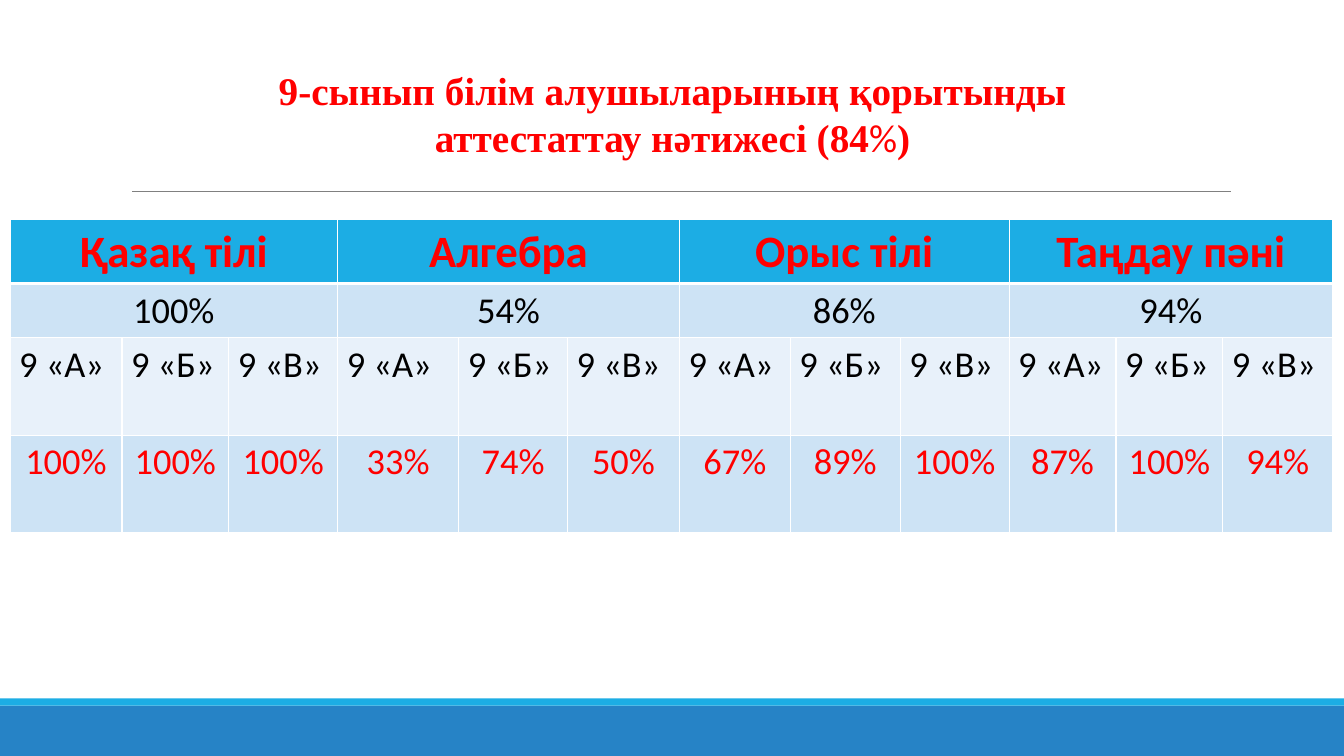
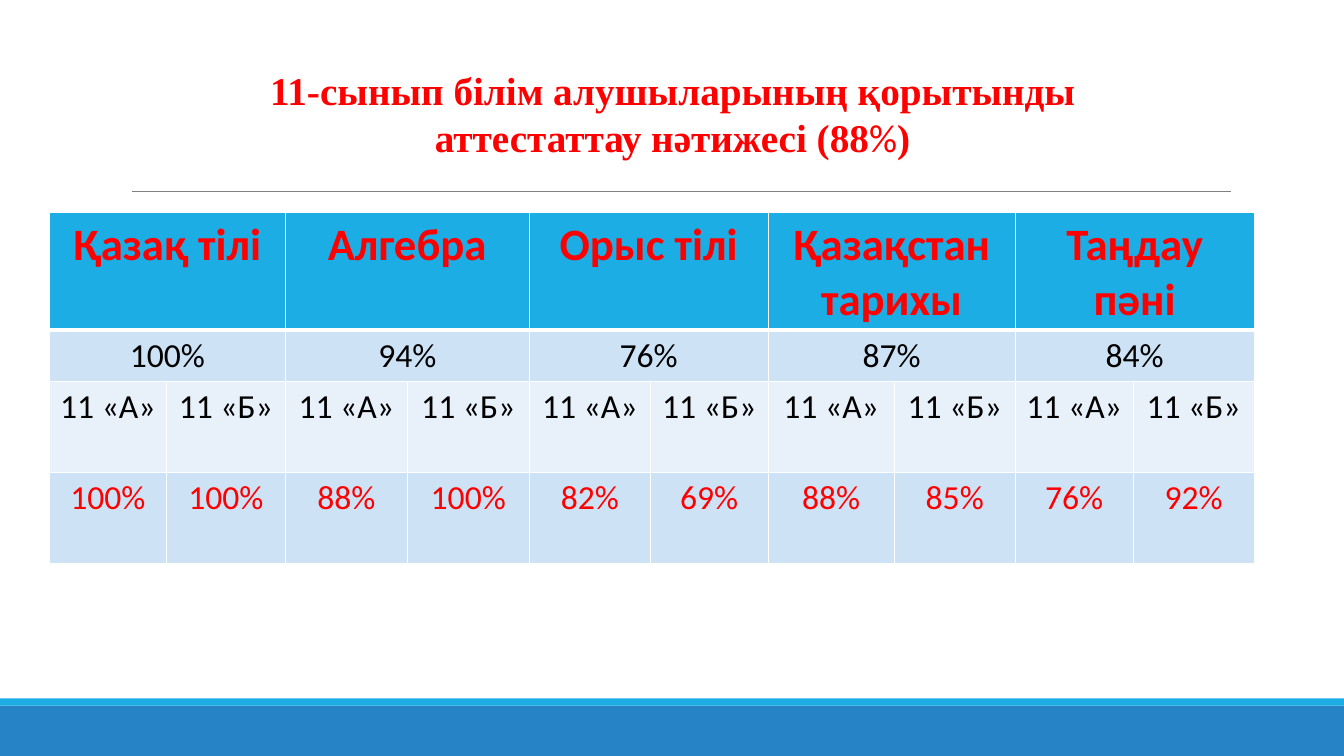
from dataclasses import dataclass

from lxml.etree import SubElement
from pptx import Presentation
from pptx.dml.color import RGBColor
from pptx.enum.shapes import MSO_CONNECTOR, MSO_SHAPE
from pptx.enum.text import MSO_ANCHOR, MSO_AUTO_SIZE, PP_ALIGN
from pptx.oxml.ns import qn
from pptx.util import Inches, Pt

RED, BLACK, WHITE, GREY = "FF0000", "000000", "FFFFFF", "808080"
BLUE, SKY, PALE, PALER = "2683C6", "1CADE4", "CDE3F5", "E8F1FA"
BODY_FONT, TITLE_FONT = "Calibri", "Times New Roman"
HEADER_SIZE = 32
CELL_MARGIN = 0.09


@dataclass(frozen=True)
class Subject:
    name: str
    total: int
    results: tuple[int, ...]


@dataclass(frozen=True)
class GradeSlide:
    grade: int
    average: int
    classes: str
    subjects: tuple[Subject, ...]
    left: float
    top: float
    widths: tuple[float, ...]
    heights: tuple[float, ...]
    size: int
    class_align: PP_ALIGN


@dataclass(frozen=True)
class RowStyle:
    fill: str
    color: str
    size: int
    bold: bool = False
    align: PP_ALIGN = PP_ALIGN.CENTER
    bottom: float = 1


GRADES = (
    GradeSlide(
        9, 84, "АБВ",
        (
            Subject("Қазақ тілі", 100, (100, 100, 100)),
            Subject("Алгебра", 54, (33, 74, 50)),
            Subject("Орыс тілі", 86, (67, 89, 100)),
            Subject("Таңдау пәні", 94, (87, 100, 94)),
        ),
        0.1, 2.18,
        (1.11, 1.06, 1.08, 1.2, 1.08, 1.11, 1.1, 1.09, 1.08, 1.06, 1.06, 1.09),
        (0.63, 0.53, 0.97, 0.97), 26, PP_ALIGN.LEFT,
    ),
    GradeSlide(
        11, 88, "АБ",
        (
            Subject("Қазақ тілі", 100, (100, 100)),
            Subject("Алгебра", 94, (88, 100)),
            Subject("Орыс тілі", 76, (82, 69)),
            Subject("Қазақстан тарихы", 87, (88, 85)),
            Subject("Таңдау пәні", 84, (76, 92)),
        ),
        0.49, 2.11,
        (1.16, 1.18, 1.21, 1.21, 1.2, 1.17, 1.25, 1.2, 1.17, 1.2),
        (1.16, 0.51, 0.9, 0.9), 24, PP_ALIGN.CENTER,
    ),
)


def rgb(color: str) -> RGBColor:
    """Turn a hex string into a colour."""
    return RGBColor.from_string(color)


def set_font(font, name: str, size: int, color: str, bold: bool) -> None:
    """Format the font of a paragraph or run."""
    font.name, font.size, font.bold = name, Pt(size), bold
    font.color.rgb = rgb(color)


def set_borders(cell, bottom: float) -> None:
    """Give a cell white borders, with its own bottom width."""
    tc_pr = cell._tc.get_or_add_tcPr()
    for i, (side, width) in enumerate(zip("LRTB", (1, 1, 1, bottom))):
        ln = SubElement(tc_pr, qn(f"a:ln{side}"), w=str(Pt(width)))
        fill = SubElement(ln, qn("a:solidFill"))
        SubElement(fill, qn("a:srgbClr"), val=WHITE)
        tc_pr.insert(i, ln)


def add_band(s, top: float, height: float, color: str):
    """Draw a full-width band."""
    band = s.shapes.add_shape(
        MSO_SHAPE.RECTANGLE, 0, Inches(top), Inches(13.33), Inches(height))
    band.shadow.inherit = False
    band.fill.solid()
    band.fill.fore_color.rgb = rgb(color)
    band.line.fill.background()
    return band


def add_rule(s):
    """Draw the thin line under the title."""
    rule = s.shapes.add_connector(
        MSO_CONNECTOR.STRAIGHT, Inches(1.31), Inches(1.9), Inches(12.21), Inches(1.9))
    rule.line.color.rgb = rgb(GREY)
    rule.line.width = Pt(0.5)
    SubElement(rule._element.spPr, qn("a:effectLst"))
    return rule


def style_layout(layout, s) -> None:
    """Place the title and move the shared decoration from a slide to its layout."""
    title = layout.placeholders[0]
    title.left, title.top = Inches(1.96), Inches(0.6)
    title.width, title.height = Inches(9.42), Inches(1.04)
    tree = title._element.getparent()
    shared = (add_band(s, 7, 0.5, BLUE), add_band(s, 6.93, 0.07, SKY), add_rule(s))
    for i, shape in enumerate(shared, start=2):
        tree.insert(i, shape._element)


def add_title(s, g: GradeSlide) -> None:
    """Fill the title, with its percent sign in the body font."""
    tf = s.shapes.title.text_frame
    tf.word_wrap = True
    tf.auto_size = MSO_AUTO_SIZE.SHAPE_TO_FIT_TEXT
    tf.vertical_anchor = MSO_ANCHOR.MIDDLE
    p = tf.paragraphs[0]
    p.alignment = PP_ALIGN.CENTER
    lead = f"{g.grade}-сынып білім алушыларының қорытынды аттестаттау нәтижесі ({g.average}"
    for text, font, bold in (
        (lead, TITLE_FONT, True), ("%", BODY_FONT, False), (")", TITLE_FONT, True)
    ):
        r = p.add_run()
        r.text = text
        set_font(r.font, font, 28, RED, bold)


def fill_row(table, row: int, texts: list[str], style: RowStyle) -> None:
    """Write a row, merging cells evenly when there are fewer texts than columns."""
    count = len(table.columns)
    span = count // len(texts)
    for col in range(count):
        cell = table.cell(row, col)
        cell.fill.solid()
        cell.fill.fore_color.rgb = rgb(style.fill)
        cell.margin_left = cell.margin_right = Inches(CELL_MARGIN)
        set_borders(cell, style.bottom)
    for i, text in enumerate(texts):
        cell = table.cell(row, i * span)
        if span > 1:
            cell.merge(table.cell(row, (i + 1) * span - 1))
        cell.text = text
        p = cell.text_frame.paragraphs[0]
        p.alignment = style.align
        set_font(p.font, BODY_FONT, style.size, style.color, style.bold)


def add_results(s, g: GradeSlide) -> None:
    """Draw the table of results by subject and class."""
    frame = s.shapes.add_table(
        len(g.heights), len(g.widths), Inches(g.left), Inches(g.top),
        Inches(sum(g.widths)), Inches(sum(g.heights)))
    table = frame.table
    for column, width in zip(table.columns, g.widths):
        column.width = Inches(width)
    for row, height in zip(table.rows, g.heights):
        row.height = Inches(height)
    rows = (
        ([sub.name for sub in g.subjects],
         RowStyle(SKY, RED, HEADER_SIZE, bold=True, bottom=3)),
        ([f"{sub.total}%" for sub in g.subjects], RowStyle(PALE, BLACK, g.size)),
        ([f"{g.grade} «{c}»" for _ in g.subjects for c in g.classes],
         RowStyle(PALER, BLACK, g.size, align=g.class_align)),
        ([f"{v}%" for sub in g.subjects for v in sub.results],
         RowStyle(PALE, RED, g.size)),
    )
    for i, (texts, style) in enumerate(rows):
        fill_row(table, i, texts, style)


def main() -> None:
    """Build and save the presentation."""
    prs = Presentation()
    prs.slide_width, prs.slide_height = Inches(13.33), Inches(7.5)
    layout = prs.slide_layouts[5]
    for i, g in enumerate(GRADES):
        s = prs.slides.add_slide(layout)
        if i == 0:
            style_layout(layout, s)
        add_title(s, g)
        add_results(s, g)
    prs.save("out.pptx")


if __name__ == "__main__":
    main()
